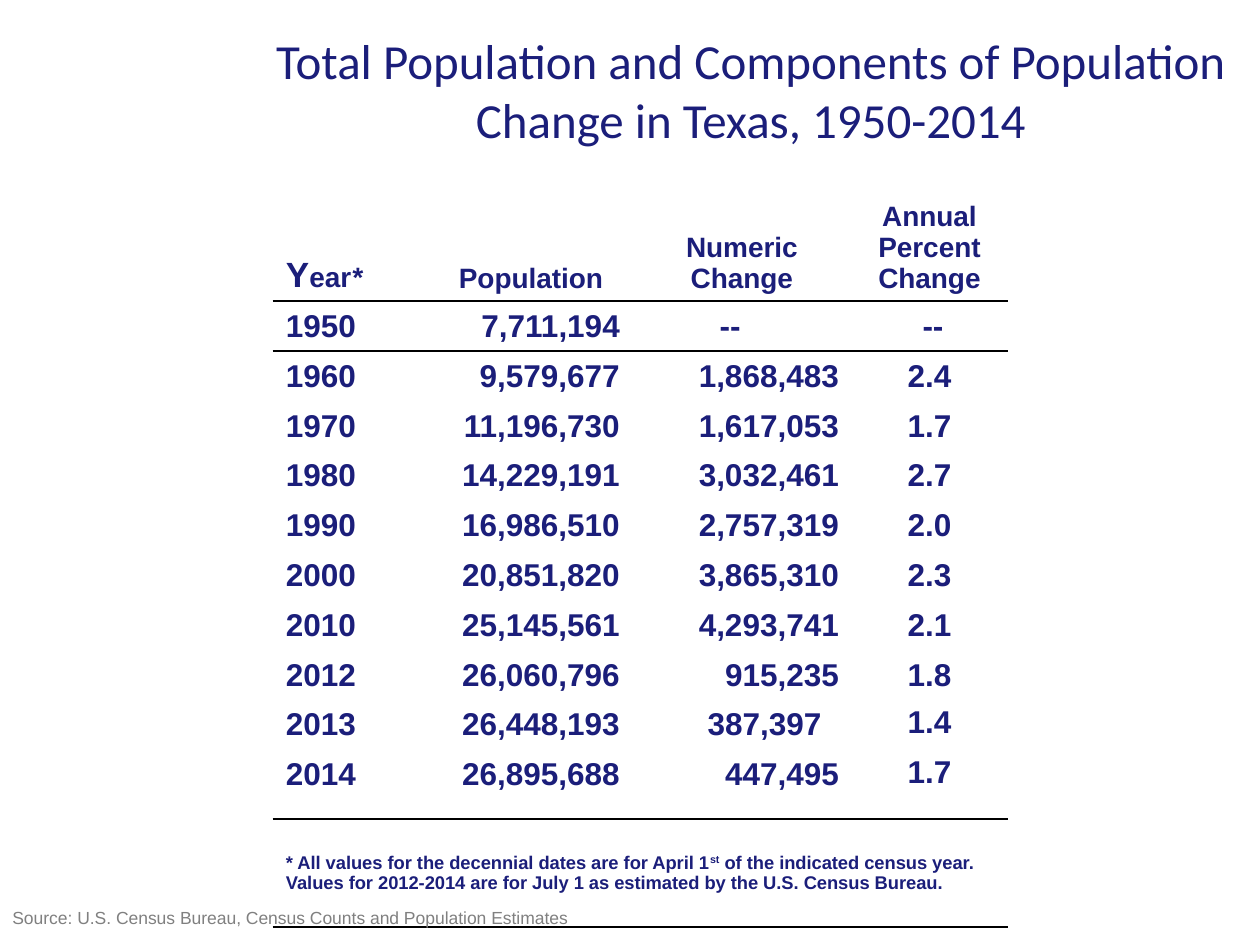
import lxml.etree
import pptx
import pptx.dml.color
import pptx.enum.text
import pptx.oxml.ns
import pptx.util

Pt = pptx.util.Pt
ALIGN = pptx.enum.text.PP_ALIGN
ANCHOR = pptx.enum.text.MSO_ANCHOR
qn = pptx.oxml.ns.qn

NAVY, GRAY, BLACK, WHITE = "1B1E7A", "808080", "000000", "FFFFFF"
BOLD = {"name": "Arial", "bold": True, "color": NAVY}
HEADING = {**BOLD, "size": Pt(16)}
BODY = {**BOLD, "size": Pt(18)}
NOTE = {**BOLD, "size": Pt(10.5)}

COLUMN_WIDTHS = [80, 125.2, 125.2, 89.2]
HEADER_HEIGHT, ROW_HEIGHT, GAP_HEIGHT, NOTE_HEIGHT = 64, 28.45, 11.8, 61.8
NUMBER_ALIGNMENTS = [ALIGN.LEFT, ALIGN.RIGHT, ALIGN.RIGHT, ALIGN.CENTER]
DASH_TABS = {2: 54.7, 3: 45.4}

HEADERS = [
    [[("Y", {"size": Pt(20)}), ("ear", {}), ("*", {"italic": True})]],
    [[("Population", {})]],
    [[("Numeric", {})], [("Change", {})]],
    [[("Annual", {})], [("Percent", {})], [("Change", {})]],
]
POPULATION_ROWS = [
    ("1950", "7,711,194", "--", "--"),
    ("1960", "9,579,677", "1,868,483", "2.4"),
    ("1970", "11,196,730", "1,617,053", "1.7"),
    ("1980", "14,229,191", "3,032,461", "2.7"),
    ("1990", "16,986,510", "2,757,319", "2.0"),
    ("2000", "20,851,820", "3,865,310", "2.3"),
    ("2010", "25,145,561", "4,293,741", "2.1"),
    ("2012", "26,060,796", "915,235", "1.8"),
    ("2013", "26,448,193", "387,397", "1.4"),
    ("2014", "26,895,688", "447,495", "1.7"),
]


def color(value):
    return pptx.dml.color.RGBColor.from_string(value)


def add_run(paragraph, text, style):
    run = paragraph.add_run()
    run.text = text
    for name, value in style.items():
        if name == "color":
            run.font.color.rgb = color(value)
        else:
            setattr(run.font, name, value)
    return run


def add_text(slide, box, text, style, alignment=ALIGN.LEFT, anchor=ANCHOR.TOP):
    shape = slide.shapes.add_textbox(*map(Pt, box))
    shape.text_frame.word_wrap = True
    shape.text_frame.vertical_anchor = anchor
    paragraph = shape.text_frame.paragraphs[0]
    paragraph.alignment = alignment
    add_run(paragraph, text, style)


def set_border(cell, *edges):
    """Draw rules on the given edges: "lnT" for top, "lnB" for bottom."""
    properties = cell._tc.get_or_add_tcPr()
    for index, edge in enumerate(edges):
        line = lxml.etree.Element(qn("a:" + edge), w=str(Pt(1.5)))
        fill = lxml.etree.SubElement(line, qn("a:solidFill"))
        lxml.etree.SubElement(fill, qn("a:srgbClr"), val=BLACK)
        properties.insert(index, line)


def add_decimal_tab(paragraph, position):
    tabs = lxml.etree.SubElement(paragraph._p.get_or_add_pPr(), qn("a:tabLst"))
    lxml.etree.SubElement(tabs, qn("a:tab"), pos=str(Pt(position)), algn="dec")


def fill_header(table):
    for column, lines in enumerate(HEADERS):
        cell = table.cell(0, column)
        cell.vertical_anchor = ANCHOR.BOTTOM
        for index, runs in enumerate(lines):
            frame = cell.text_frame
            paragraph = frame.add_paragraph() if index else frame.paragraphs[0]
            paragraph.alignment = ALIGN.CENTER if column else ALIGN.LEFT
            for text, changes in runs:
                add_run(paragraph, text, {**HEADING, **changes})
        set_border(cell, "lnB")
    table.cell(0, 1).margin_left = Pt(16.6)


def fill_numbers(table):
    for row, values in enumerate(POPULATION_ROWS, 1):
        for column, value in enumerate(values):
            cell = table.cell(row, column)
            paragraph = cell.text_frame.paragraphs[0]
            raised = column == 3 and values[0] in ("2013", "2014")
            cell.vertical_anchor = ANCHOR.TOP if raised else ANCHOR.BOTTOM
            if value == "--":
                add_decimal_tab(paragraph, DASH_TABS[column])
                value = "\t" + value
            else:
                paragraph.alignment = NUMBER_ALIGNMENTS[column]
            add_run(paragraph, value, BODY)
            if row == 1:
                set_border(cell, "lnT")
    table.cell(9, 2).margin_right = Pt(17.2)


def fill_footnote(table, gap_row, note_row):
    for column in range(len(COLUMN_WIDTHS)):
        gap = table.cell(gap_row, column)
        gap.margin_top = gap.margin_bottom = 0
        paragraph = gap.text_frame.paragraphs[0]
        lxml.etree.SubElement(paragraph._p, qn("a:endParaRPr"), sz="800")
        set_border(gap, "lnB")
        set_border(table.cell(note_row, column), "lnT", "lnB")
    note = table.cell(note_row, 0)
    note.merge(table.cell(note_row, len(COLUMN_WIDTHS) - 1))
    note.vertical_anchor = ANCHOR.MIDDLE
    paragraph = note.text_frame.paragraphs[0]
    add_run(paragraph, "* All values for the decennial dates are for April 1", NOTE)
    ordinal = add_run(paragraph, "st", NOTE)
    ordinal._r.get_or_add_rPr().set("baseline", "30000")
    add_run(paragraph, " of the indicated census year. Values for 2012-2014 are "
            "for July 1 as estimated by the U.S. Census Bureau.", NOTE)


def add_population_table(slide, left, top):
    heights = [HEADER_HEIGHT, *[ROW_HEIGHT] * len(POPULATION_ROWS),
               GAP_HEIGHT, NOTE_HEIGHT]
    table = slide.shapes.add_table(
        len(heights), len(COLUMN_WIDTHS), Pt(left), Pt(top),
        Pt(sum(COLUMN_WIDTHS)), Pt(sum(heights))).table
    table.first_row = table.horz_banding = False
    for column, width in zip(table.columns, COLUMN_WIDTHS):
        column.width = Pt(width)
    for row, height in zip(table.rows, heights):
        row.height = Pt(height)
    for cell in table.iter_cells():
        cell.fill.solid()
        cell.fill.fore_color.rgb = color(WHITE)
    fill_header(table)
    fill_numbers(table)
    fill_footnote(table, len(heights) - 2, len(heights) - 1)


def main():
    presentation = pptx.Presentation()
    presentation.slide_width, presentation.slide_height = Pt(720), Pt(540)
    slide = presentation.slides.add_slide(presentation.slide_layouts[6])
    add_population_table(slide, 156.2, 108)
    add_text(slide, (138, 12, 582, 78),
             "Total Population and Components of Population Change in Texas, 1950-2014",
             {"name": "Calibri", "size": Pt(28), "color": NAVY},
             ALIGN.CENTER, ANCHOR.MIDDLE)
    add_text(slide, (0, 515, 360, 19.4),
             "Source: U.S. Census Bureau, Census Counts and Population Estimates",
             {"name": "Arial", "size": Pt(10), "color": GRAY})
    presentation.save("out.pptx")


if __name__ == "__main__":
    main()
